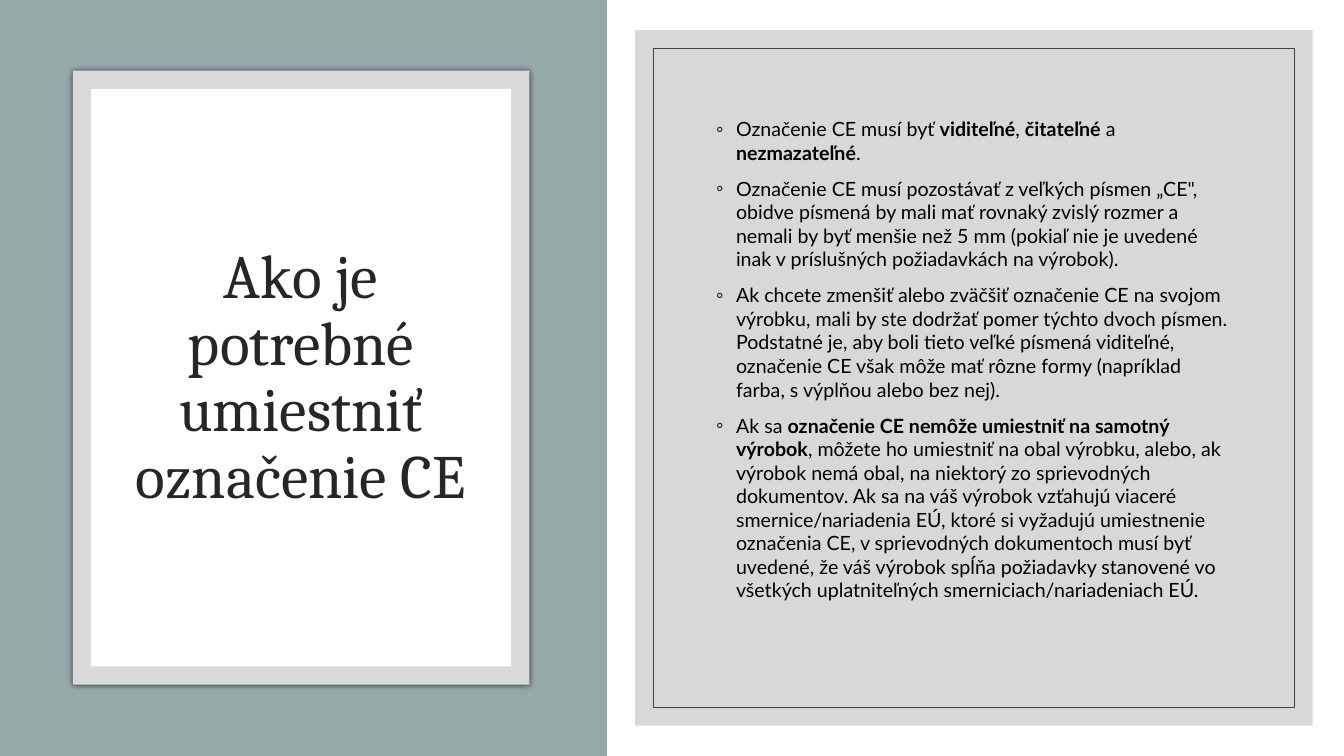
import pptx
import pptx.util
import pptx.dml.color
import pptx.enum.shapes
import pptx.enum.text
import pptx.oxml
import pptx.oxml.ns

WIDE, HIGH = 13.33, 7.5
MARGIN = 0.18
TITLE = "Ako je potrebné umiestniť označenie CE"
RULES = [
    "Označenie CE musí byť *viditeľné*, *čitateľné* a *nezmazateľné*.",
    "Označenie CE musí pozostávať z veľkých písmen „CE\", obidve písmená by mali mať "
    "rovnaký zvislý rozmer a nemali by byť menšie než 5 mm (pokiaľ nie je uvedené inak "
    "v príslušných požiadavkách na výrobok).",
    "Ak chcete zmenšiť alebo zväčšiť označenie CE na svojom výrobku, mali by ste dodržať "
    "pomer týchto dvoch písmen. Podstatné je, aby boli tieto veľké písmená viditeľné, "
    "označenie CE však môže mať rôzne formy (napríklad farba, s výplňou alebo bez nej).",
    "Ak sa *označenie CE nemôže umiestniť na samotný výrobok*, môžete ho umiestniť na obal "
    "výrobku, alebo, ak výrobok nemá obal, na niektorý zo sprievodných dokumentov. Ak sa na "
    "váš výrobok vzťahujú viaceré smernice/nariadenia EÚ, ktoré si vyžadujú umiestnenie "
    "označenia CE, v sprievodných dokumentoch musí byť uvedené, že váš výrobok spĺňa "
    "požiadavky stanovené vo všetkých uplatniteľných smerniciach/nariadeniach EÚ.",
]


def color(code):
    return pptx.dml.color.RGBColor.from_string(code)


def node(tag, inner="", **attrs):
    pairs = " ".join(f'{key}="{val}"' for key, val in attrs.items())
    space = pptx.oxml.ns.nsdecls("a")
    return pptx.oxml.parse_xml(f"<a:{tag} {space} {pairs}>{inner}</a:{tag}>")


def inset(box, gap):
    left, top, width, height = box
    return left + gap, top + gap, width - 2 * gap, height - 2 * gap


def place(shape, box):
    shape.left, shape.top, shape.width, shape.height = map(pptx.util.Inches, box)


def panel(slide, box, fill=None, line=None, alpha=None):
    kind = pptx.enum.shapes.MSO_SHAPE.RECTANGLE
    shape = slide.shapes.add_shape(kind, *map(pptx.util.Inches, box))
    shape.shadow.inherit = False
    if fill:
        shape.fill.solid()
        shape.fill.fore_color.rgb = color(fill)
    else:
        shape.fill.background()
    if line:
        shape.line.color.rgb = color(line)
        shape.line.width = pptx.util.Pt(0.5)
    else:
        shape.line.fill.background()
    if alpha:
        tint = shape.element.spPr.find(".//" + pptx.oxml.ns.qn("a:srgbClr"))
        tint.append(node("alpha", val=alpha * 1000))
    return shape


def glow(shape):
    effects = shape.element.spPr.find(pptx.oxml.ns.qn("a:effectLst"))
    tint = '<a:srgbClr val="000000"><a:alpha val="66000"/></a:srgbClr>'
    effects.append(node("outerShdw", tint, blurRad=pptx.util.Pt(4), dist=0, algn="ctr"))


def write(par, text, font, size, ink):
    for turn, piece in enumerate(text.split("*")):
        if piece:
            run = par.add_run()
            run.text = piece
            run.font.name = font
            run.font.size = pptx.util.Pt(size)
            run.font.bold = turn % 2 == 1
            run.font.color.rgb = color(ink)


def settle(shape, box):
    shape.element.getparent().append(shape.element)
    place(shape, box)
    frame = shape.text_frame
    frame.word_wrap = True
    frame.auto_size = pptx.enum.text.MSO_AUTO_SIZE.NONE
    frame.vertical_anchor = pptx.enum.text.MSO_ANCHOR.MIDDLE
    return frame


def bullet(par):
    props = par._p.get_or_add_pPr()
    props.set("marL", str(pptx.util.Inches(0.2)))
    props.set("indent", str(pptx.util.Inches(-0.2)))
    props.append(node("buClr", '<a:srgbClr val="262626"/>'))
    props.append(node("buFont", typeface="Lato"))
    props.append(node("buChar", char="◦"))


def heading(slide, box):
    left, top, width, height = box
    panel(slide, box, fill="96A9A9")
    card = (left + 0.12 * width, top + 0.0935 * height, 0.752 * width, 0.812 * height)
    glow(panel(slide, card, fill="D9D9D9"))
    sheet = inset(card, MARGIN)
    panel(slide, sheet, fill="FFFFFF")
    x, y, wide, high = inset(sheet, MARGIN)
    frame = settle(slide.shapes.title, (x, y + 0.24, wide, high - 0.46))
    par = frame.paragraphs[0]
    par.alignment = pptx.enum.text.PP_ALIGN.CENTER
    par.line_spacing = 0.9
    write(par, TITLE, "Cambria", 44, "262626")


def content(slide, box):
    panel(slide, box, fill="BFBFBF", alpha=60)
    panel(slide, inset(box, MARGIN), line="404040")
    left, top, width, height = box
    area = (left + 0.7, top + 0.72, width - 1.39, height - 1.45)
    frame = settle(slide.placeholders[1], area)
    frame.margin_bottom = pptx.util.Inches(0.41)
    for turn, rule in enumerate(RULES):
        par = frame.add_paragraph() if turn else frame.paragraphs[0]
        par.line_spacing = 1.0
        par.space_before = pptx.util.Pt(9)
        par.space_after = pptx.util.Pt(0)
        bullet(par)
        write(par, rule, "Lato", 14, "000000")


def main():
    deck = pptx.Presentation()
    deck.slide_width = pptx.util.Inches(WIDE)
    deck.slide_height = pptx.util.Inches(HIGH)
    slide = deck.slides.add_slide(deck.slide_layouts[1])
    panel(slide, (0, 0, WIDE, HIGH), fill="FFFFFF")
    heading(slide, (0, 0, 6.02, HIGH))
    content(slide, (6.3, 0.04 * HIGH, 6.72, 0.92 * HIGH))
    deck.save("out.pptx")


if __name__ == "__main__":
    main()
